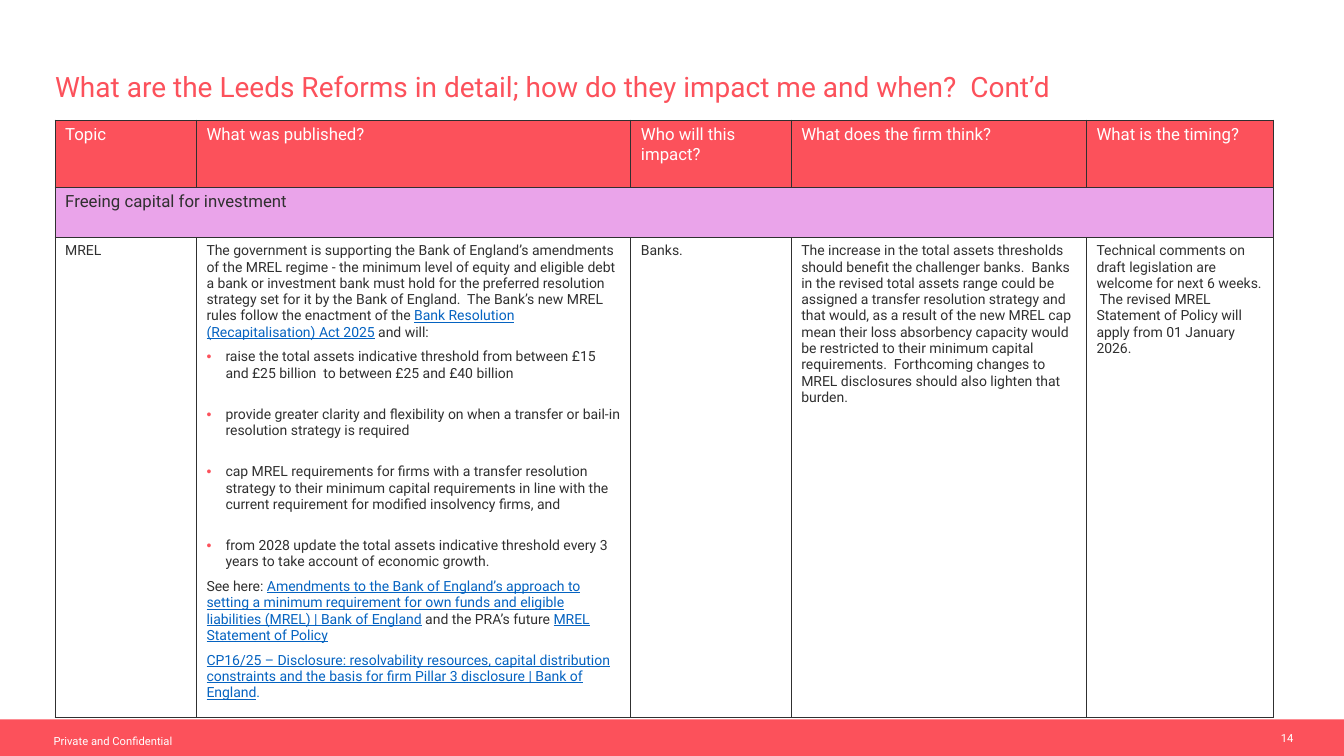
from lxml.etree import SubElement
from pptx import Presentation
from pptx.dml.color import RGBColor
from pptx.enum.shapes import MSO_SHAPE
from pptx.enum.text import MSO_ANCHOR, PP_ALIGN
from pptx.oxml.ns import qn
from pptx.util import Cm, Pt

FONT = "Roboto"
COLORS = {
    "red": "FC515B",
    "violet": "EAA4EA",
    "ink": "303030",
    "link": "0563C1",
    "blue": "0070C0",
    "white": "FFFFFF",
}
COLUMN_WIDTHS = [3.56, 10.95, 4.04, 7.44, 4.72]
ROW_HEIGHTS = [1.69, 1.27, 11.79]
BULLET_INDENT = Cm(0.48)
BULLET_GAP = 17.7

HEADERS = ["Topic", "What was published?", "Who will this impact?",
           "What does the firm think?", "What is the timing?"]
SECTION = "Freeing capital for investment"

# Each paragraph is a list of (text, colour) pieces; link pieces are underlined
INTRO = [
    ("The government is supporting the Bank of England’s amendments of the MREL regime - the "
     "minimum level of equity and eligible debt a bank or investment bank must hold for the "
     "preferred resolution strategy set for it by the Bank of England.  The Bank’s new MREL "
     "rules follow the enactment of the ", "ink"),
    ("Bank Resolution (Recapitalisation) Act 2025", "link"),
    (" and will:", "ink"),
]
MEASURES = [
    "raise the total assets indicative threshold from between £15 and £25 billion  to between "
    "£25 and £40 billion",
    "provide greater clarity and flexibility on when a transfer or bail-in resolution strategy "
    "is required",
    "cap MREL requirements for firms with a transfer resolution strategy to their minimum "
    "capital requirements in line with the current requirement for modified insolvency firms, and",
    "from 2028 update the total assets indicative threshold every 3 years to take account of "
    "economic growth.",
]
SOURCES = [
    [("See here: ", "ink"),
     ("Amendments to the Bank of England’s approach to setting a minimum requirement for own "
      "funds and eligible liabilities (MREL) | Bank of England", "link"),
     (" ", "blue"),
     ("and the PRA’s future ", "ink"),
     ("MREL Statement of Policy", "link")],
    [("CP16/25 – Disclosure: resolvability resources, capital distribution constraints and the "
      "basis for firm Pillar 3 disclosure | Bank of England", "link"),
     (".", "blue")],
]
OPINION = (
    "The increase in the total assets thresholds should benefit the challenger banks.  Banks in "
    "the revised total assets range could be assigned a transfer resolution strategy and that "
    "would, as a result of the new MREL cap mean their loss absorbency capacity would be "
    "restricted to their minimum capital requirements.  Forthcoming changes to MREL disclosures "
    "should also lighten that burden."
)
TIMING = (
    "Technical comments on draft legislation are welcome for next 6 weeks.  The revised MREL "
    "Statement of Policy will apply from 01 January 2026."
)


def rgb(name):
    return RGBColor.from_string(COLORS[name])


def style_font(font, size, color):
    font.name = FONT
    font.size = Pt(size)
    font.color.rgb = rgb(color)


def set_text(text_frame, text, size, color, align=PP_ALIGN.LEFT):
    text_frame.text = text
    paragraph = text_frame.paragraphs[0]
    paragraph.alignment = align
    style_font(paragraph.runs[0].font, size, color)


def add_label(slide, box, text, size, color, margins, align=PP_ALIGN.LEFT, anchor=MSO_ANCHOR.TOP):
    text_frame = slide.shapes.add_textbox(*map(Cm, box)).text_frame
    text_frame.word_wrap = True
    text_frame.vertical_anchor = anchor
    (text_frame.margin_left, text_frame.margin_top,
     text_frame.margin_right, text_frame.margin_bottom) = map(Cm, margins)
    set_text(text_frame, text, size, color, align)


def add_footer(slide, width):
    band = slide.shapes.add_shape(MSO_SHAPE.RECTANGLE, 0, Cm(18.13), width, Cm(0.92))
    band.shadow.inherit = False
    band.fill.solid()
    band.fill.fore_color.rgb = rgb("red")
    band.line.fill.background()
    add_label(slide, (1.35, 18.5, 4.78, 0.33), "Private and Confidential", 8, "white", (0, 0, 0, 0))
    add_label(slide, (31.45, 18.24, 1.4, 0.74), "14", 8, "white", (0.25, 0.13, 0.25, 0.13),
              PP_ALIGN.RIGHT, MSO_ANCHOR.MIDDLE)


def style_cell(cell, fill=None):
    # Borders come before the fill in the cell properties
    properties = cell._tc.get_or_add_tcPr()
    for side in ("a:lnL", "a:lnR", "a:lnT", "a:lnB"):
        border = SubElement(properties, qn(side), w=str(Pt(1)))
        solid = SubElement(border, qn("a:solidFill"))
        SubElement(solid, qn("a:srgbClr"), val=COLORS["ink"])
    if fill:
        cell.fill.solid()
        cell.fill.fore_color.rgb = rgb(fill)
    else:
        cell.fill.background()


def add_bullet(paragraph):
    properties = paragraph._p.get_or_add_pPr()
    properties.set("marL", str(BULLET_INDENT))
    properties.set("indent", str(-BULLET_INDENT))
    bullet_color = SubElement(properties, qn("a:buClr"))
    SubElement(bullet_color, qn("a:srgbClr"), val=COLORS["red"])
    SubElement(properties, qn("a:buFont"), typeface="Arial")
    SubElement(properties, qn("a:buChar"), char="•")


def fill_paragraph(paragraph, pieces, space_after):
    paragraph.space_after = Pt(space_after)
    for text, color in pieces:
        run = paragraph.add_run()
        run.text = text
        style_font(run.font, 10, color)
        if color == "link":
            run.font.underline = True


def fill_published(text_frame):
    fill_paragraph(text_frame.paragraphs[0], INTRO, 6)
    for measure in MEASURES:
        paragraph = text_frame.add_paragraph()
        add_bullet(paragraph)
        fill_paragraph(paragraph, [(measure, "ink")], 6 if measure == MEASURES[-1] else BULLET_GAP)
    for pieces in SOURCES:
        fill_paragraph(text_frame.add_paragraph(), pieces, 6)


def add_reform_table(slide):
    frame = slide.shapes.add_table(len(ROW_HEIGHTS), len(COLUMN_WIDTHS), Cm(1.39), Cm(3.03),
                                   Cm(sum(COLUMN_WIDTHS)), Cm(sum(ROW_HEIGHTS)))
    table = frame.table
    for column, width in zip(table.columns, COLUMN_WIDTHS):
        column.width = Cm(width)
    for row, height, fill in zip(table.rows, ROW_HEIGHTS, ("red", "violet", None)):
        row.height = Cm(height)
        for cell in row.cells:
            style_cell(cell, fill)

    # Header and section rows
    for cell, header in zip(table.rows[0].cells, HEADERS):
        set_text(cell.text_frame, header, 12, "white")
    section = table.cell(1, 0)
    section.merge(table.cell(1, len(COLUMN_WIDTHS) - 1))
    set_text(section.text_frame, SECTION, 12, "ink", PP_ALIGN.JUSTIFY)

    # Reform row
    for column, text in {0: "MREL", 2: "Banks.", 3: OPINION, 4: TIMING}.items():
        set_text(table.cell(2, column).text_frame, text, 10, "ink")
    fill_published(table.cell(2, 1).text_frame)


def main():
    presentation = Presentation()
    presentation.slide_width = Cm(33.87)
    presentation.slide_height = Cm(19.05)
    slide = presentation.slides.add_slide(presentation.slide_layouts[6])
    add_footer(slide, presentation.slide_width)
    add_label(slide, (1.39, 1.63, 31.04, 1.12),
              "What are the Leeds Reforms in detail; how do they impact me and when?  Cont’d",
              20, "red", (0, 0.13, 0.13, 0.13))
    add_reform_table(slide)
    presentation.save("out.pptx")


if __name__ == "__main__":
    main()
